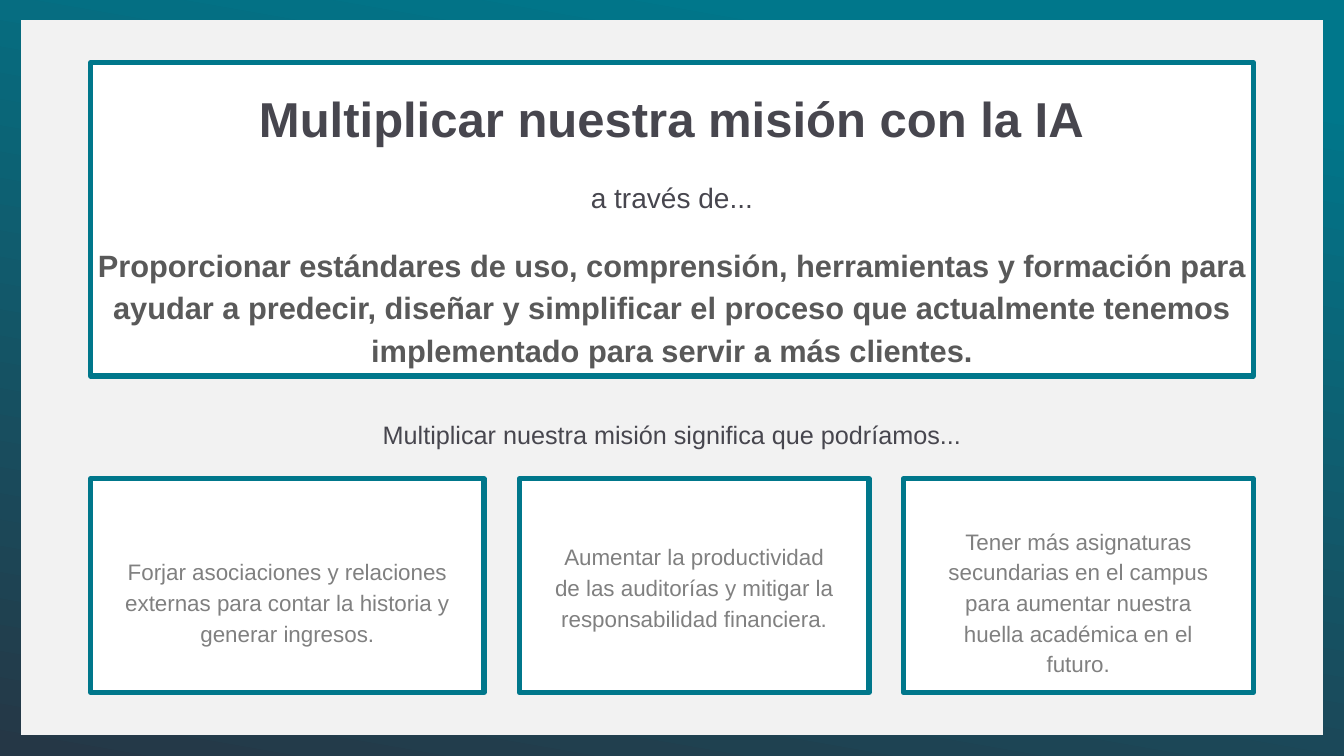
"""Build the slide about multiplying the mission with AI."""
import pptx
import pptx.dml.color
import pptx.enum.shapes
import pptx.enum.text
import pptx.oxml
import pptx.oxml.ns
import pptx.util
from lxml import etree

COLORS = {
    "navy": "253746", "teal": "00778B", "white": "FFFFFF", "mist": "F2F2F2",
    "ink": "47464E", "slate": "595959", "gray": "808080",
}
MISSION = [
    ("Multiplicar nuestra misión con la IA",
     {"size": 35, "bold": True, "color": "ink"},
     {"space_before": 0, "space_after": 10}),
    ("a través de...",
     {"size": 20, "bold": False, "color": "ink"},
     {"space_before": 10, "space_after": 10, "line_spacing": 1.14}),
    ("Proporcionar estándares de uso, comprensión, herramientas y formación "
     "para ayudar a predecir, diseñar y simplificar el proceso que actualmente "
     "tenemos implementado para servir a más clientes.",
     {"size": 22, "bold": True, "color": "slate"},
     {"space_before": 10, "space_after": 10, "line_spacing": 1.14}),
]
BRIDGE = [
    ("Multiplicar nuestra misión significa que podríamos...",
     {"size": 18, "bold": False, "color": "ink"},
     {"line_spacing": 1.5}),
]
GOAL_FONT = {"size": 16, "bold": False, "color": "gray"}
GOAL_SPACING = {"space_before": 10, "space_after": 10, "line_spacing": 1.14}
GOALS = [
    ("Forjar asociaciones y relaciones externas para contar la historia y "
     "generar ingresos.", 0.9, 3.9, 0.3),
    ("Aumentar la productividad de las auditorías y mitigar la "
     "responsabilidad financiera.", 5.15, 3.47, 0),
    ("Tener más asignaturas secundarias en el campus para aumentar nuestra "
     "huella académica en el futuro.", 8.96, 3.47, 0.3),
]
WIDTH, HEIGHT = 13.33, 7.5
FRAME = 0.21
MARGIN = 0.9
MISSION_TOP, MISSION_HEIGHT = 0.62, 3.11
BRIDGE_TOP, BRIDGE_MARGIN, BRIDGE_HEIGHT = 4.01, 1.52, 0.4
GOAL_TOP, GOAL_HEIGHT = 4.75, 2.12
ANCHOR = pptx.enum.text.MSO_ANCHOR


def rgb(name):
    """Return the named colour."""
    return pptx.dml.color.RGBColor.from_string(COLORS[name])


def inches(*lengths):
    """Turn lengths into inches."""
    return [pptx.util.Inches(length) for length in lengths]


def paint(shape, fill, line=None):
    """Give a shape its fill and outline."""
    shape.shadow.inherit = False
    shape.fill.solid()
    shape.fill.fore_color.rgb = rgb(fill)
    if line:
        shape.line.color.rgb = rgb(line)
        shape.line.width = pptx.util.Pt(3.75)
    else:
        shape.line.fill.background()


def write(shape, paragraphs, insets, anchor):
    """Fill a shape with centred paragraphs."""
    frame = shape.text_frame
    sides = ("margin_left", "margin_top", "margin_right", "margin_bottom")
    layout = dict(zip(sides, inches(*insets)))
    layout.update(word_wrap=True, vertical_anchor=anchor,
                  auto_size=pptx.enum.text.MSO_AUTO_SIZE.NONE)
    for name, value in layout.items():
        setattr(frame, name, value)
    for index, (words, font, spacing) in enumerate(paragraphs):
        paragraph = frame.add_paragraph() if index else frame.paragraphs[0]
        paragraph.alignment = pptx.enum.text.PP_ALIGN.CENTER
        for name, value in spacing.items():
            points = name != "line_spacing"
            setattr(paragraph, name, pptx.util.Pt(value) if points else value)
        run = paragraph.add_run()
        run.text = words
        run.font.name = "Arial"
        run.font.size = pptx.util.Pt(font["size"])
        run.font.bold = font["bold"]
        run.font.color.rgb = rgb(font["color"])


def add_box(slide, left, top, width, height, fill, line=None):
    """Add a painted rectangle."""
    box = slide.shapes.add_shape(
        pptx.enum.shapes.MSO_SHAPE.RECTANGLE, *inches(left, top, width, height))
    paint(box, fill, line)
    return box


def add_backdrop(slide):
    """Set the gradient and the pale sheet inside it."""
    backdrop = slide.background.fill
    backdrop.gradient()
    backdrop.gradient_angle = 80
    stops = [(0, "navy"), (0.9, "teal")]
    for stop, (position, color) in zip(backdrop.gradient_stops, stops):
        stop.position = position
        stop.color.rgb = rgb(color)
    for fill in ("white", "mist"):
        sheet = add_box(slide, FRAME, FRAME - 0.01, WIDTH - 2 * FRAME,
                        HEIGHT - 2 * FRAME + 0.01, fill)
    tint = sheet.element.spPr.find(".//" + pptx.oxml.ns.qn("a:srgbClr"))
    etree.SubElement(tint, pptx.oxml.ns.qn("a:alpha"), val="96000")


def add_mission(slide):
    """Turn the title into the mission panel, above the backdrop."""
    mission = slide.shapes.title
    place = inches(MARGIN, MISSION_TOP, WIDTH - 2 * MARGIN, MISSION_HEIGHT)
    for name, value in zip(("left", "top", "width", "height"), place):
        setattr(mission, name, value)
    paint(mission, "white", "teal")
    write(mission, MISSION, (0.03, 0.26, 0.03, 0.03), ANCHOR.TOP)
    mission.element.getparent().append(mission.element)


def main():
    """Build and save the slide."""
    deck = pptx.Presentation()
    deck.slide_width, deck.slide_height = inches(WIDTH, HEIGHT)
    slide = deck.slides.add_slide(deck.slide_layouts[5])
    add_backdrop(slide)
    add_mission(slide)
    bridge = slide.shapes.add_textbox(*inches(
        BRIDGE_MARGIN, BRIDGE_TOP, WIDTH - 2 * BRIDGE_MARGIN, BRIDGE_HEIGHT))
    write(bridge, BRIDGE, (0, 0, 0, 0), ANCHOR.TOP)
    for words, left, width, drop in GOALS:
        goal = add_box(slide, left, GOAL_TOP, width, GOAL_HEIGHT, "white", "teal")
        write(goal, [(words, GOAL_FONT, GOAL_SPACING)],
              (0.3, drop, 0.3, 0), ANCHOR.MIDDLE)
    deck.save("out.pptx")


if __name__ == "__main__":
    main()
